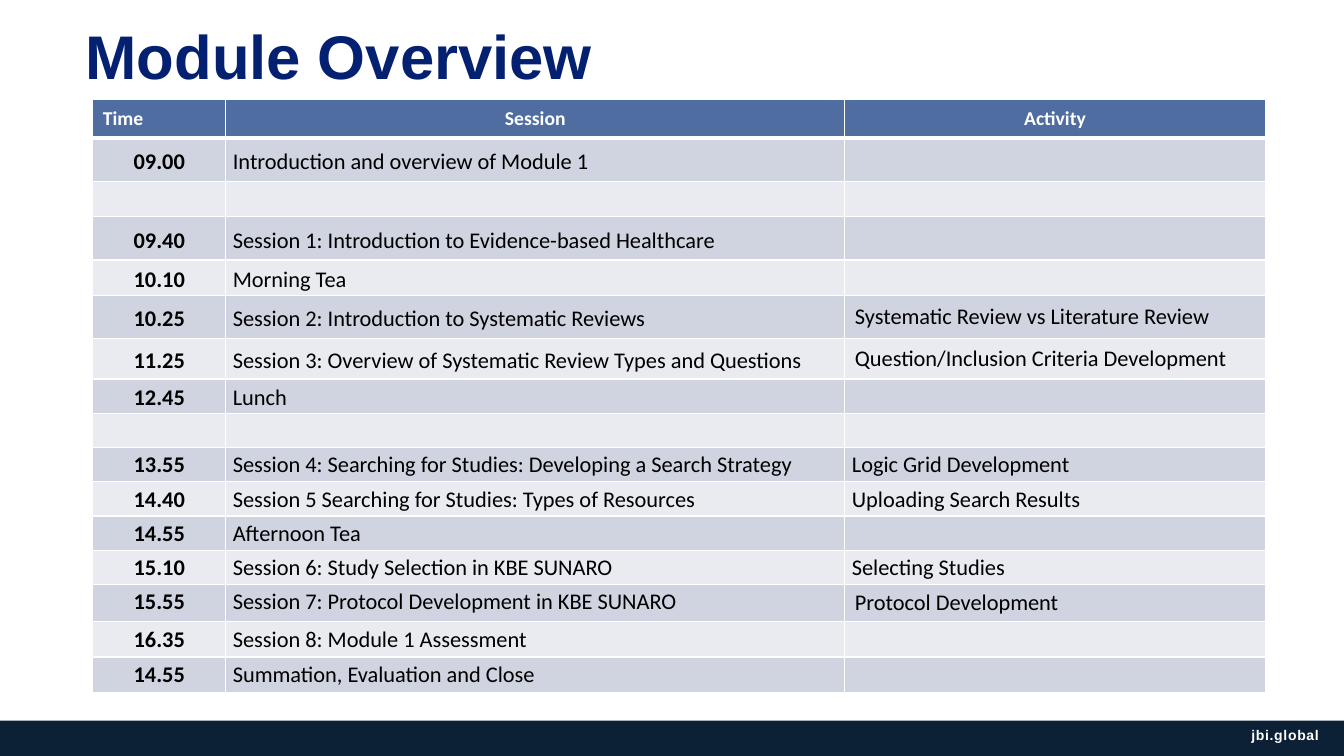
from lxml import etree
from pptx import Presentation
from pptx.dml.color import RGBColor
from pptx.enum.shapes import MSO_SHAPE
from pptx.enum.text import MSO_ANCHOR, PP_ALIGN
from pptx.oxml.ns import qn
from pptx.util import Inches, Pt

RECTANGLE = MSO_SHAPE.RECTANGLE
TOP, MIDDLE = MSO_ANCHOR.TOP, MSO_ANCHOR.MIDDLE
LEFT, CENTER, RIGHT = PP_ALIGN.LEFT, PP_ALIGN.CENTER, PP_ALIGN.RIGHT

COLORS = {
    "white": "FFFFFF",
    "black": "000000",
    "title": "042071",
    "footer": "0C2036",
    "header": "506DA2",
    "odd_row": "D0D4E0",
    "even_row": "E9EBF0",
}

HEADINGS = ("Time", "Session", "Activity")
COLUMN_WIDTHS = (1.32, 6.14, 4.17)
HEADER_HEIGHT = 0.38
FIRST_TOP_ROW = 9  # rows from here on hold their text at the top

# Row height, time, session, activity
SCHEDULE = [
    (0.43, "09.00", "Introduction and overview of Module 1", ""),
    (0.35, "", "", ""),
    (0.43, "09.40", "Session 1: Introduction to Evidence-based Healthcare", ""),
    (0.35, "10.10", "Morning Tea", ""),
    (0.43, "10.25", "Session 2: Introduction to Systematic Reviews",
     "Systematic Review vs Literature Review"),
    (0.4, "11.25", "Session 3: Overview of Systematic Review Types and Questions",
     "Question/Inclusion Criteria Development"),
    (0.34, "12.45", "Lunch", ""),
    (0.34, "", "", ""),
    (0.34, "13.55", "Session 4: Searching for Studies: Developing a Search Strategy",
     "Logic Grid Development"),
    (0.34, "14.40", "Session 5 Searching for Studies: Types of Resources",
     "Uploading Search Results"),
    (0.34, "14.55", "Afternoon Tea", ""),
    (0.34, "15.10", "Session 6: Study Selection in KBE SUNARO", "Selecting Studies"),
    (0.37, "15.55", "Session 7: Protocol Development in KBE SUNARO",
     "Protocol Development"),
    (0.35, "16.35", "Session 8: Module 1 Assessment", ""),
    (0.35, "14.55", "Summation, Evaluation and Close", ""),
]
# Activities set with the wider default margins and single line spacing
WIDE_MARGIN_ROWS = (5, 6, 13)


class ModuleSlide:
    def __init__(self, presentation):
        self.slide = presentation.slides.add_slide(presentation.slide_layouts[6])

    def color(self, name):
        return RGBColor.from_string(COLORS[name])

    def format_text(self, text_frame, text, font, size, color, bold=True,
                    align=LEFT, line_spacing=1.0):
        text_frame.text = text
        paragraph = text_frame.paragraphs[0]
        paragraph.alignment = align
        paragraph.line_spacing = line_spacing
        for run in paragraph.runs:
            run.font.name = font
            run.font.size = Pt(size)
            run.font.bold = bold
            run.font.color.rgb = self.color(color)
        return paragraph

    def add_bar(self, left, top, width, height, color):
        bar = self.slide.shapes.add_shape(
            RECTANGLE, Inches(left), Inches(top), Inches(width), Inches(height))
        bar.shadow.inherit = False
        bar.fill.solid()
        bar.fill.fore_color.rgb = self.color(color)
        bar.line.fill.background()

    def add_text(self, left, top, width, height, text, size, color,
                 margin_top=0.05, spacing=None, **style):
        box = self.slide.shapes.add_textbox(
            Inches(left), Inches(top), Inches(width), Inches(height))
        text_frame = box.text_frame
        text_frame.word_wrap = True
        text_frame.margin_top = Inches(margin_top)
        paragraph = self.format_text(text_frame, text, "Arial", size, color, **style)
        if spacing:
            for run in paragraph.runs:
                run.font._element.set("spc", str(spacing))

    def add_borders(self, cell, bottom_width):
        properties = cell._tc.get_or_add_tcPr()
        widths = (("a:lnL", 1), ("a:lnR", 1), ("a:lnT", 1), ("a:lnB", bottom_width))
        for index, (tag, width) in enumerate(widths):
            line = etree.Element(qn(tag), w=str(Pt(width)))
            fill = etree.SubElement(line, qn("a:solidFill"))
            etree.SubElement(fill, qn("a:srgbClr"), val=COLORS["white"])
            properties.insert(index, line)

    def format_cell(self, cell, text, fill, size, color, anchor,
                    margins=(0.07, 0), border=1, **style):
        cell.fill.solid()
        cell.fill.fore_color.rgb = self.color(fill)
        cell.margin_left = cell.margin_right = Inches(margins[0])
        cell.margin_top = cell.margin_bottom = Inches(margins[1])
        cell.vertical_anchor = anchor
        self.add_borders(cell, border)
        self.format_text(cell.text_frame, text, "Calibri", size, color, **style)

    def add_schedule(self, left, top):
        heights = [HEADER_HEIGHT] + [row[0] for row in SCHEDULE]
        table = self.slide.shapes.add_table(
            len(heights), len(HEADINGS), Inches(left), Inches(top),
            Inches(sum(COLUMN_WIDTHS)), Inches(sum(heights))).table
        for column, width in zip(table.columns, COLUMN_WIDTHS):
            column.width = Inches(width)
        for row, height in zip(table.rows, heights):
            row.height = Inches(height)

        # Header row
        for column, heading in enumerate(HEADINGS):
            self.format_cell(table.cell(0, column), heading, "header", 14, "white",
                             MIDDLE, margins=(0.1, 0.05), border=3,
                             align=CENTER if column else LEFT)

        # Body rows
        for row, (_, *texts) in enumerate(SCHEDULE, start=1):
            fill = "odd_row" if row % 2 else "even_row"
            anchor = MIDDLE if row < FIRST_TOP_ROW else TOP
            for column, text in enumerate(texts):
                wide = column == 2 and row in WIDE_MARGIN_ROWS
                self.format_cell(table.cell(row, column), text, fill, 16, "black",
                                 anchor, margins=(0.1, 0.05) if wide else (0.07, 0),
                                 bold=column == 0,
                                 align=LEFT if column else CENTER,
                                 line_spacing=1.15 if text and not wide else 1.0)


def main():
    presentation = Presentation()
    presentation.slide_width = Inches(13.33)
    presentation.slide_height = Inches(7.5)
    page = ModuleSlide(presentation)

    # Footer
    page.add_bar(0, 7.15, 13.33, 0.35, "footer")
    page.add_text(11.55, 7.16, 1.63, 0.27, "jbi.global", 10, "white",
                  spacing=50, align=RIGHT)

    # Title and timetable
    page.add_text(0.75, 0.26, 12.58, 0.7, "Module Overview", 44, "title",
                  margin_top=0, line_spacing=0.9)
    page.add_schedule(0.92, 0.99)

    presentation.save("out.pptx")


if __name__ == "__main__":
    main()
